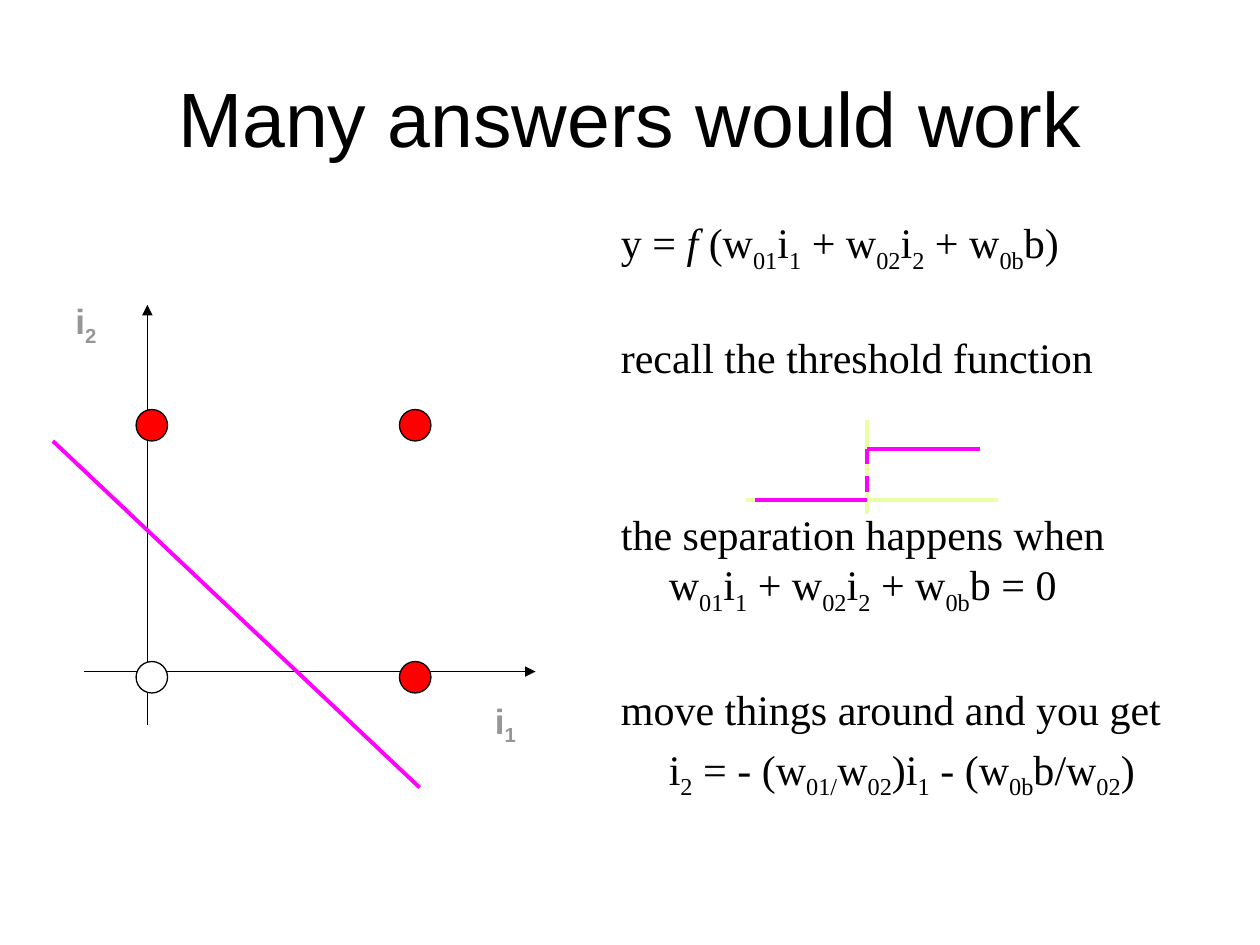
"""Build a slide on the separating lines of a threshold unit."""
from typing import NamedTuple, Optional

from lxml import etree
from pptx import Presentation
from pptx import util as u
from pptx.dml.color import RGBColor
from pptx.enum import dml, shapes, text
from pptx.oxml.ns import qn

BLACK, GREY, WHITE = "000000", "969696", "FFFFFF"
RED, MAGENTA, LIME = "FF0000", "FF00FF", "E9FFA3"
DOT_SIZE = 0.25
NEAR_X, FAR_X = 1.08, 3.17
LOW_Y, HIGH_Y = 5.25, 3.25
STEP_X, STEP_LOW, STEP_HIGH = 6.88, 3.97, 3.56


class Line(NamedTuple):
    start: tuple[float, float]
    end: tuple[float, float]
    color: str
    width: float = 2.25
    arrow: bool = False
    dashed: bool = False


class Dot(NamedTuple):
    left: float
    top: float
    color: str


class Entry(NamedTuple):
    """A paragraph whose text alternates between normal and subscript at each bar."""
    content: str
    space_before: float = 0
    indent: float = 0
    hanging: float = 0


class Style(NamedTuple):
    font: str
    size: float
    color: str = BLACK
    bold: bool = False
    align: Optional[text.PP_ALIGN] = None
    anchor: text.MSO_ANCHOR = text.MSO_ANCHOR.TOP


AXES = [
    Line((1.17, 5.75), (1.17, 2.42), BLACK, 0.75, arrow=True),
    Line((0.67, 5.33), (4.25, 5.33), BLACK, 0.75, arrow=True),
]
DOTS = [
    Dot(NEAR_X, LOW_Y, WHITE),
    Dot(FAR_X, LOW_Y, RED),
    Dot(FAR_X, HIGH_Y, RED),
    Dot(NEAR_X, HIGH_Y, RED),
]
SEPARATOR = Line((0.42, 3.5), (3.33, 6.25), MAGENTA)
THRESHOLD = [
    Line((5.92, STEP_LOW), (7.92, STEP_LOW), LIME),
    Line((STEP_X, 3.33), (STEP_X, 4.08), LIME),
    Line((5.99, STEP_LOW), (STEP_X, STEP_LOW), MAGENTA),
    Line((STEP_X, STEP_HIGH), (7.78, STEP_HIGH), MAGENTA),
    Line((STEP_X, STEP_HIGH), (STEP_X, STEP_LOW), MAGENTA, dashed=True),
]
WEIGHTED_SUM = "w|01|i|1| + w|02|i|2| + w|0b|b"
EXPLANATION = [
    Entry(f"y = ||f ||({WEIGHTED_SUM})", 5.5, 0.38, -0.38),
    Entry("recall the threshold function", 33, 0.38, -0.38),
    Entry(f"the separation happens when\v{WEIGHTED_SUM} = 0", 72, 0.38, -0.38),
    Entry("move things around and you get", 38.5, 0.38, -0.38),
    Entry("i|2| = - (w|01/|w|02|)i|1| - (w|0b|b/w|02|)", 5.5, 0.38),
]


def rgb(color: str) -> RGBColor:
    return RGBColor.from_string(color)


def draw_line(slide, line: Line) -> None:
    connector = slide.shapes.add_connector(
        shapes.MSO_CONNECTOR.STRAIGHT,
        *(u.Inches(value) for value in (*line.start, *line.end)),
    )
    connector.line.color.rgb = rgb(line.color)
    connector.line.width = u.Pt(line.width)
    if line.dashed:
        connector.line.dash_style = dml.MSO_LINE.DASH
    if line.arrow:
        outline = connector.line._get_or_add_ln()
        etree.SubElement(outline, qn("a:tailEnd"), type="triangle")
    etree.SubElement(connector._element.spPr, qn("a:effectLst"))


def draw_dot(slide, dot: Dot) -> None:
    size = u.Inches(DOT_SIZE)
    shape = slide.shapes.add_shape(
        shapes.MSO_SHAPE.OVAL, u.Inches(dot.left), u.Inches(dot.top), size, size
    )
    shape.shadow.inherit = False
    shape.fill.solid()
    shape.fill.fore_color.rgb = rgb(dot.color)
    shape.line.color.rgb = rgb(BLACK)
    shape.line.width = u.Pt(0.75)


def fill_paragraph(paragraph, entry: Entry, style: Style) -> None:
    paragraph.alignment = style.align
    paragraph.space_before = u.Pt(entry.space_before)
    properties = paragraph._p.get_or_add_pPr()
    properties.set("marL", str(u.Inches(entry.indent)))
    properties.set("indent", str(u.Inches(entry.hanging)))
    for index, part in enumerate(entry.content.split("|")):
        for position, piece in enumerate(part.split("\v")):
            if position:
                paragraph.add_line_break()
            if not piece:
                continue
            run = paragraph.add_run()
            run.text = piece
            run.font.name = style.font
            run.font.size = u.Pt(style.size)
            run.font.bold = style.bold
            run.font.italic = piece == "f "
            run.font.color.rgb = rgb(style.color)
            if index % 2:
                run._r.get_or_add_rPr().set("baseline", "-25000")


def draw_text(
    slide, box: tuple[float, float, float, float], entries: list[Entry], style: Style
) -> None:
    shape = slide.shapes.add_textbox(*(u.Inches(value) for value in box))
    frame = shape.text_frame
    frame.word_wrap = True
    frame.vertical_anchor = style.anchor
    for index, entry in enumerate(entries):
        paragraph = frame.add_paragraph() if index else frame.paragraphs[0]
        fill_paragraph(paragraph, entry, style)


def main() -> None:
    presentation = Presentation()
    presentation.slide_width = u.Inches(10)
    presentation.slide_height = u.Inches(7.5)
    slide = presentation.slides.add_slide(presentation.slide_layouts[6])

    title_style = Style(
        "Arial", 44, align=text.PP_ALIGN.CENTER, anchor=text.MSO_ANCHOR.MIDDLE
    )
    label_style = Style("Arial", 20, GREY, bold=True)
    draw_text(slide, (0.5, 0.3, 9, 1.25), [Entry("Many answers would work")], title_style)
    draw_text(slide, (4.83, 1.67, 4.83, 5.42), EXPLANATION, Style("Times New Roman", 24))
    for axis in AXES:
        draw_line(slide, axis)
    draw_text(slide, (0.5, 2.33, 0.42, 0.43), [Entry("i|2")], label_style)
    draw_text(slide, (3.83, 5.5, 0.42, 0.43), [Entry("i|1")], label_style)
    for dot in DOTS:
        draw_dot(slide, dot)
    for line in [SEPARATOR, *THRESHOLD]:
        draw_line(slide, line)

    presentation.save("out.pptx")


if __name__ == "__main__":
    main()
